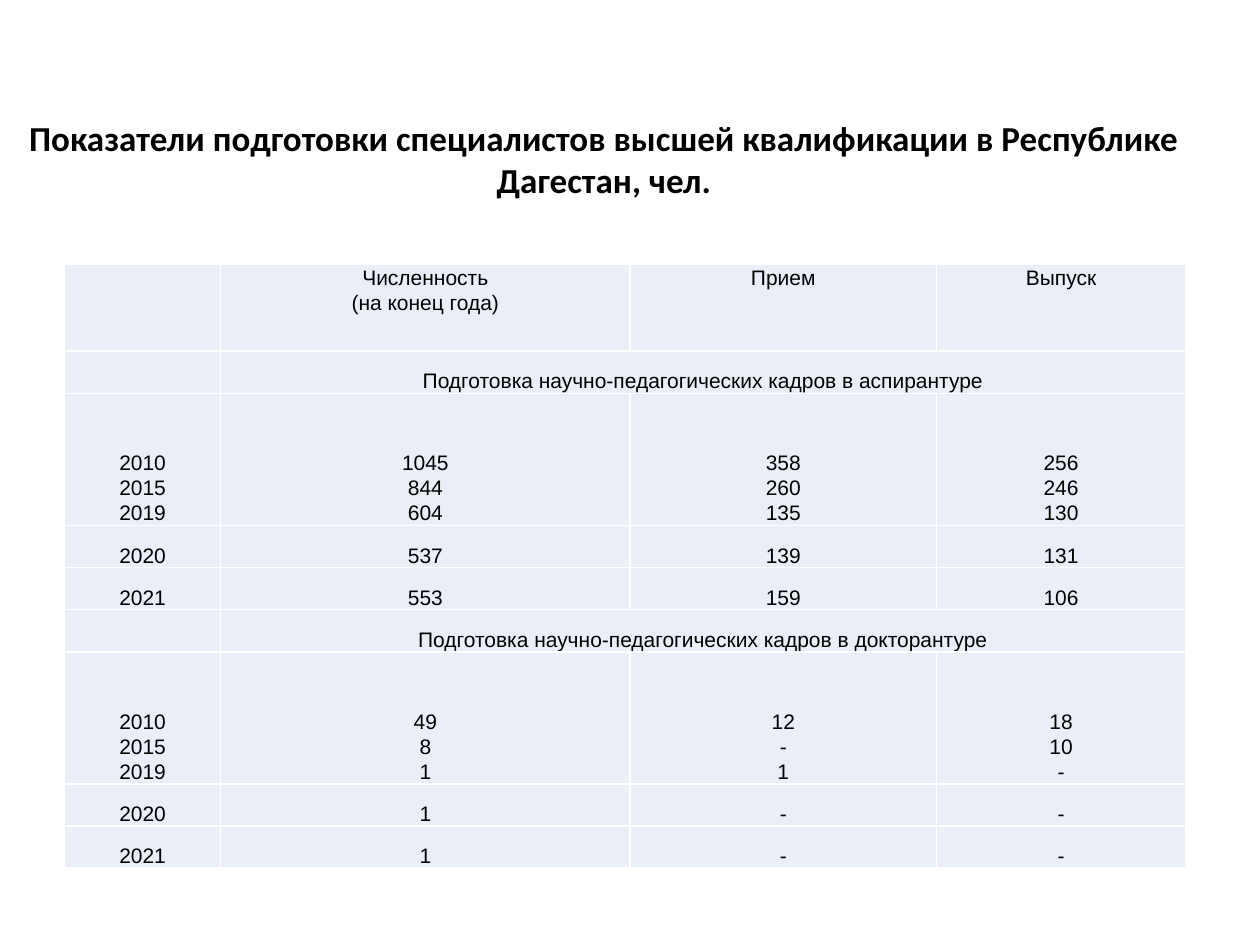
from lxml.etree import SubElement
from pptx import Presentation
from pptx.dml.color import RGBColor
from pptx.enum.text import MSO_ANCHOR, PP_ALIGN
from pptx.oxml.ns import qn
from pptx.util import Cm, Pt

COLUMN_WIDTHS = [3.15, 8.25, 6.18, 5.02]
HEADER_HEIGHT, LINE_HEIGHT, GROUP_HEIGHT = 1.75, 0.85, 2.66

HEADER = ["", "Численность\n(на конец года)", "Прием", "Выпуск"]
POSTGRADUATE = [
    ["2010\n2015\n2019", "1045\n844\n604", "358\n260\n135", "256\n246\n130"],
    ["2020", "537", "139", "131"],
    ["2021", "553", "159", "106"],
]
DOCTORAL = [
    ["2010\n2015\n2019", "49\n8\n1", "12\n-\n1", "18\n10\n-"],
    ["2020", "1", "-", "-"],
    ["2021", "1", "-", "-"],
]
ROWS = [
    HEADER,
    ["", "Подготовка научно-педагогических кадров в аспирантуре"],
    *POSTGRADUATE,
    ["", "Подготовка научно-педагогических кадров в докторантуре"],
    *DOCTORAL,
]


def color(value):
    return RGBColor.from_string(value)


def style_paragraph(para, font_name, size, bold=False):
    para.alignment = PP_ALIGN.CENTER
    para.font.name = font_name
    para.font.size = Pt(size)
    para.font.bold = bold
    para.font.color.rgb = color("000000")


def add_title(page, text):
    box = page.shapes.add_textbox(Cm(0.3), Cm(1.83), Cm(23.75), Cm(2.74))
    frame = box.text_frame
    frame.word_wrap = True
    frame.vertical_anchor = MSO_ANCHOR.MIDDLE
    frame.text = text
    style_paragraph(frame.paragraphs[0], "Calibri", 20, bold=True)


def set_borders(cell, value):
    properties = cell._tc.get_or_add_tcPr()
    for side in ("lnL", "lnR", "lnT", "lnB"):
        line = SubElement(properties, qn(f"a:{side}"), w=str(Pt(1)))
        fill = SubElement(line, qn("a:solidFill"))
        SubElement(fill, qn("a:srgbClr"), val=value)


def style_cell(cell, is_header):
    set_borders(cell, "FFFFFF")
    cell.fill.solid()
    cell.fill.fore_color.rgb = color("EAEFF7")
    cell.margin_top = cell.margin_bottom = 0
    cell.margin_left = cell.margin_right = Cm(0 if is_header else 0.05)
    cell.vertical_anchor = MSO_ANCHOR.TOP if is_header else MSO_ANCHOR.BOTTOM
    for para in cell.text_frame.paragraphs:
        style_paragraph(para, "Arial", 12)
        para.line_spacing = 1.07


def row_height(values):
    if values is HEADER:
        return HEADER_HEIGHT
    return GROUP_HEIGHT if "\n" in values[0] else LINE_HEIGHT


def add_training_table(page):
    heights = [row_height(values) for values in ROWS]
    table = page.shapes.add_table(
        len(ROWS), len(COLUMN_WIDTHS), Cm(1.3), Cm(5.33),
        Cm(sum(COLUMN_WIDTHS)), Cm(sum(heights)),
    ).table
    table.first_row = table.horz_banding = False
    for column, width in zip(table.columns, COLUMN_WIDTHS):
        column.width = Cm(width)

    for index, values in enumerate(ROWS):
        row = table.rows[index]
        row.height = Cm(heights[index])
        for cell, text in zip(row.cells, values):
            cell.text = text
        for cell in row.cells:
            style_cell(cell, values is HEADER)
        # Section headings span all the value columns
        if len(values) == 2:
            table.cell(index, 1).merge(table.cell(index, 3))


def main():
    deck = Presentation()
    deck.slide_width, deck.slide_height = Cm(25.4), Cm(19.05)
    page = deck.slides.add_slide(deck.slide_layouts[6])
    add_title(page, "Показатели подготовки специалистов высшей квалификации "
                    "в Республике Дагестан, чел.")
    add_training_table(page)
    deck.save("out.pptx")


if __name__ == "__main__":
    main()
